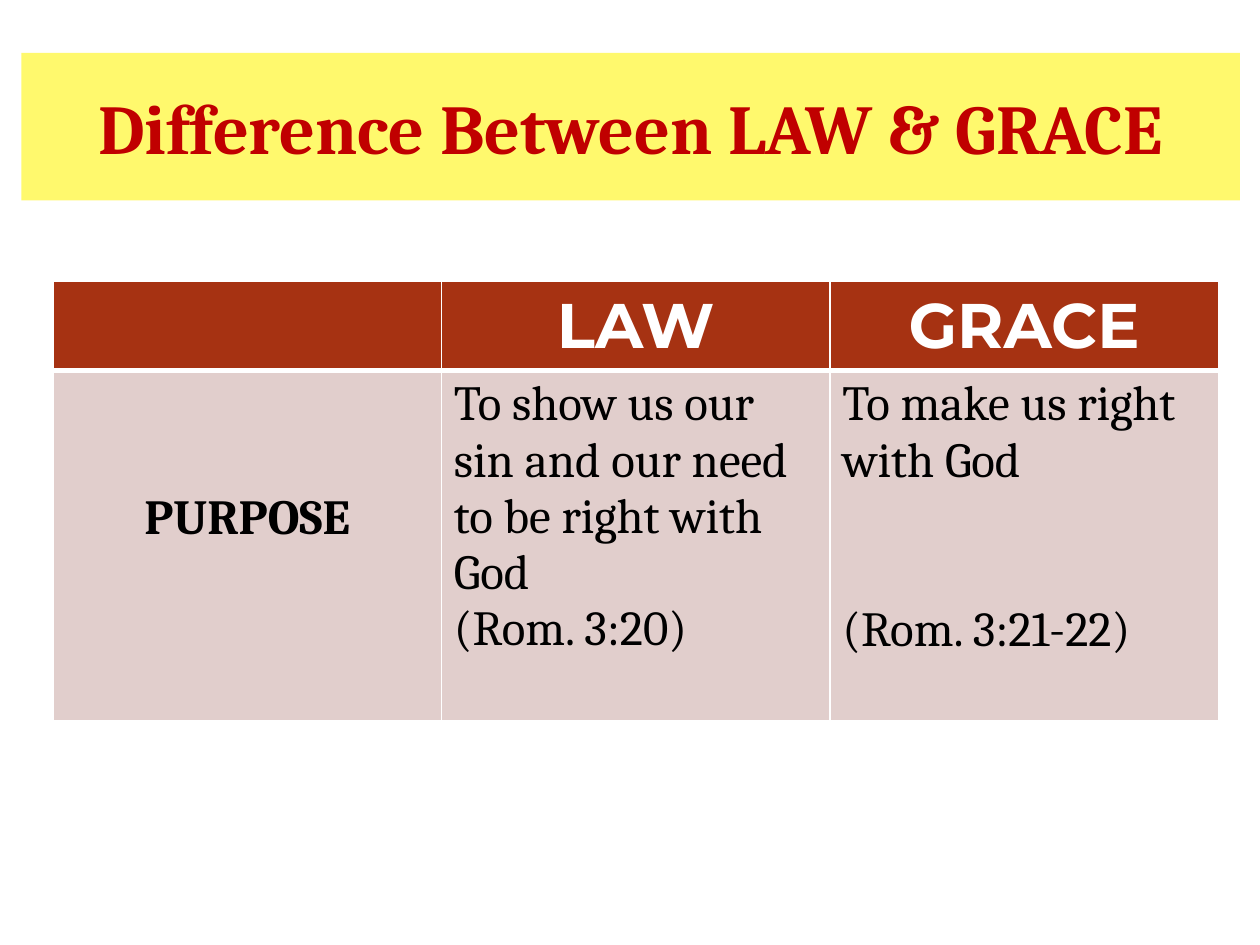
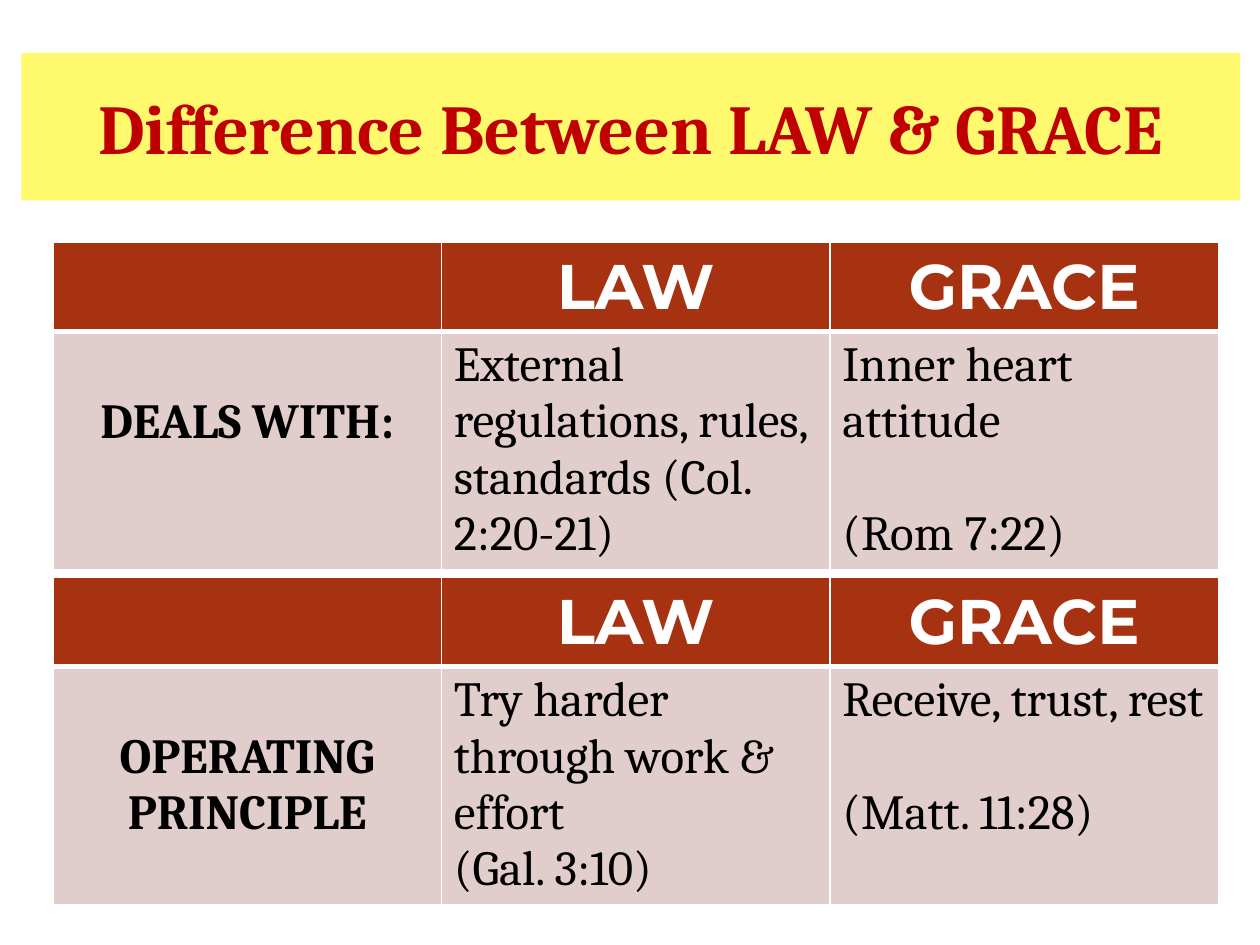
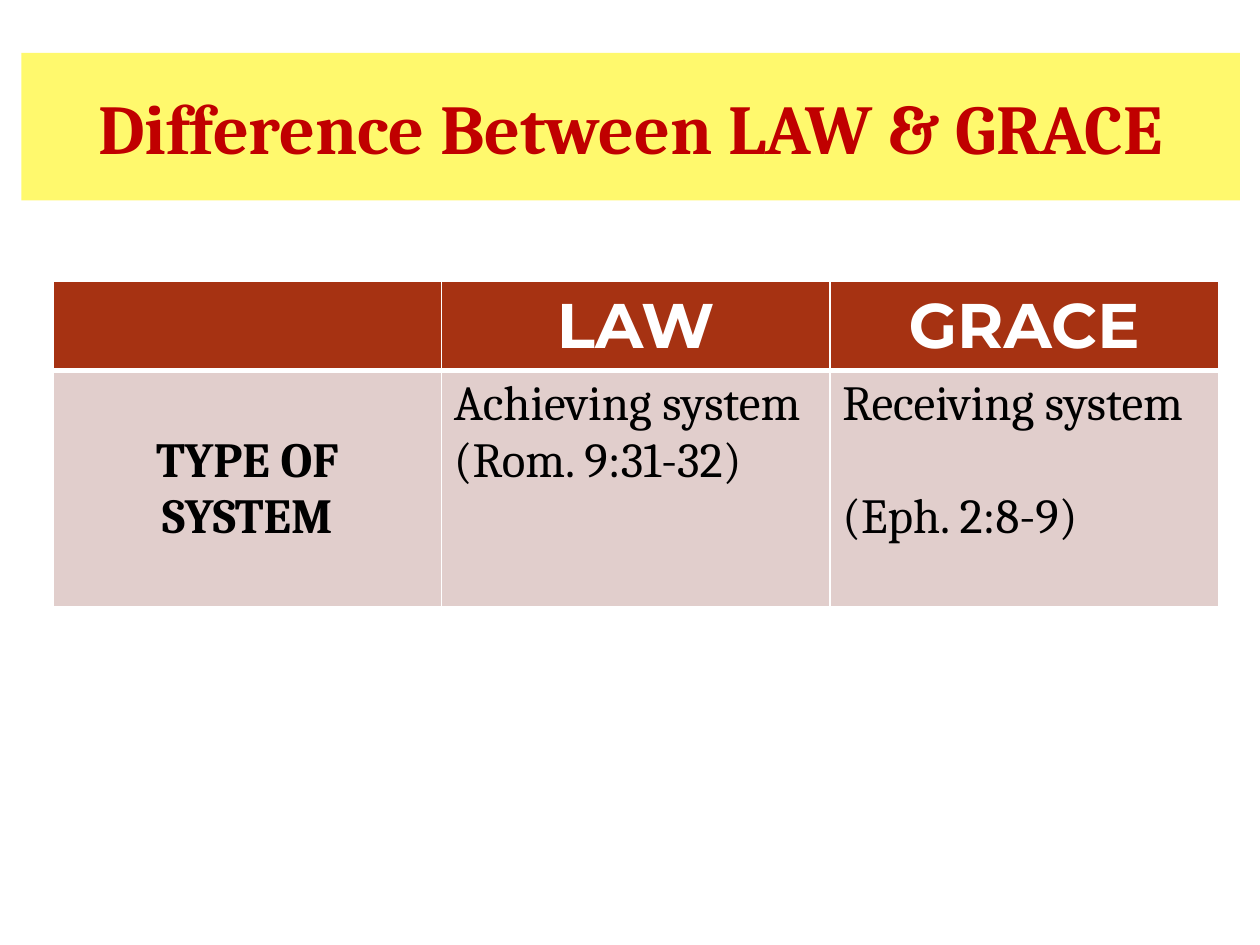
from dataclasses import dataclass

from lxml import etree
from pptx import Presentation
from pptx.dml.color import RGBColor
from pptx.enum import text
from pptx.oxml.ns import qn
from pptx.util import Inches, Pt


@dataclass(frozen=True)
class Theme:
    band: str = "FFF96D"
    title: str = "C00000"
    header: str = "A63212"
    body: str = "E1CECC"
    ink: str = "000000"
    white: str = "FFFFFF"
    serif: str = "Cambria"
    sans: str = "Montserrat"
    title_size: int = 40
    header_size: int = 36
    body_size: int = 28


theme = Theme()
TITLE = "Difference Between LAW & GRACE"
HEADINGS = ["", "LAW", "GRACE"]
LEFT, WIDTH, HEADER_HEIGHT = 0.42, 9.25, 0.7
LINE = 0.45  # height of one line of body text

# Each slide lists its tables: top, body height, label, lines above the label,
# then for law and grace: statement, reference, lines between the two.
SLIDES = [
    [(2.23, 2.78, "PURPOSE", 2,
      ("To show us our sin and our need to be right with God", "(Rom. 3:20)", 0),
      ("To make us right with God", "(Rom. 3:21-22)", 2))],
    [(1.92, 1.88, "DEALS WITH:", 1,
      ("External regulations, rules, standards (Col. 2:20-21)", "", 0),
      ("Inner heart attitude", "(Rom 7:22)", 1)),
     (4.58, 1.88, "OPERATING PRINCIPLE", 1,
      ("Try harder through work & effort", "(Gal. 3:10)", 0),
      ("Receive, trust, rest", "(Matt. 11:28)", 1))],
    [(2.23, 1.88, "TYPE OF SYSTEM", 1,
      ("Achieving system", "(Rom. 9:31-32)", 0),
      ("Receiving system", "(Eph. 2:8-9)", 1))],
]


def add_run(p, words, size, font, color, bold=True, centred=True):
    p.alignment = text.PP_ALIGN.CENTER if centred else text.PP_ALIGN.LEFT
    r = p.add_run()
    r.text = words
    r.font.size, r.font.name, r.font.bold = Pt(size), font, bold
    r.font.color.rgb = RGBColor.from_string(color)


def style_cell(cell, fill, borders):
    """Draw white borders, given as side: points, and fill the cell."""
    tc_pr = cell._tc.get_or_add_tcPr()
    for side, points in borders.items():
        ln = etree.SubElement(tc_pr, qn(f"a:ln{side}"), w=str(Pt(points)))
        solid = etree.SubElement(ln, qn("a:solidFill"))
        etree.SubElement(solid, qn("a:srgbClr"), val=theme.white)
    cell.fill.solid()
    cell.fill.fore_color.rgb = RGBColor.from_string(fill)


prs = Presentation()
prs.slide_width, prs.slide_height = Inches(10), Inches(7.5)

for tables in SLIDES:
    s = prs.slides.add_slide(prs.slide_layouts[5])
    title = s.shapes.title
    title.left, title.top = Inches(0.17), Inches(0.42)
    title.width, title.height = Inches(9.67), Inches(1.17)
    title.fill.solid()
    title.fill.fore_color.rgb = RGBColor.from_string(theme.band)
    tf = title.text_frame
    tf.vertical_anchor = text.MSO_ANCHOR.MIDDLE
    add_run(tf.paragraphs[0], TITLE, theme.title_size, theme.serif, theme.title)

    for top, body_height, label, label_drop, *statements in tables:
        frame = s.shapes.add_table(2, 3, Inches(LEFT), Inches(top), Inches(WIDTH),
                                   Inches(HEADER_HEIGHT + body_height))
        table = frame.table
        table.rows[0].height = Inches(HEADER_HEIGHT)
        table.rows[1].height = Inches(body_height)

        for col, heading in enumerate(HEADINGS):
            cell = table.cell(0, col)
            style_cell(cell, theme.header, {"L": 1, "R": 1, "T": 1, "B": 3})
            if heading:
                add_run(cell.text_frame.paragraphs[0], heading,
                        theme.header_size, theme.sans, theme.white)
            style_cell(table.cell(1, col), theme.body, {"L": 1, "R": 1, "B": 1})

        cell = table.cell(1, 0)
        cell.margin_top = Inches(0.05 + label_drop * LINE)
        add_run(cell.text_frame.paragraphs[0], label,
                theme.body_size, theme.serif, theme.ink)

        for col, (statement, reference, gap) in enumerate(statements, 1):
            tf = table.cell(1, col).text_frame
            add_run(tf.paragraphs[0], statement, theme.body_size, theme.serif,
                    theme.ink, bold=False, centred=False)
            if reference:
                p = tf.add_paragraph()
                p.space_before = Inches(gap * LINE)
                add_run(p, reference, theme.body_size, theme.serif,
                        theme.ink, bold=False, centred=False)

prs.save("out.pptx")
